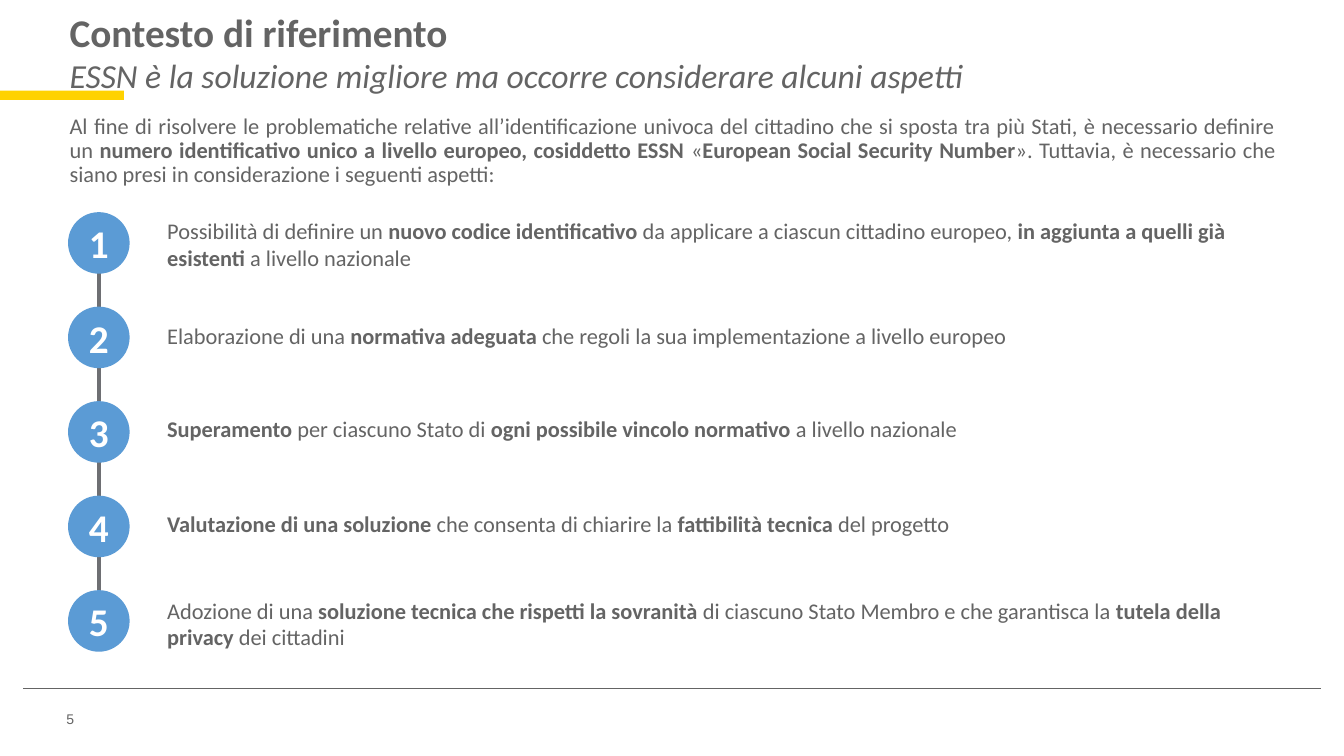
from dataclasses import dataclass

from lxml.etree import SubElement
from pptx import Presentation
from pptx.dml.color import RGBColor
from pptx.enum.shapes import MSO_CONNECTOR, MSO_SHAPE
from pptx.enum.text import MSO_ANCHOR, PP_ALIGN
from pptx.oxml.ns import qn
from pptx.util import Inches, Pt


@dataclass(frozen=True)
class Theme:
    grey: str = "646464"
    rail: str = "6E6F73"
    yellow: str = "FFD200"
    blue: str = "5B9BD5"
    white: str = "FFFFFF"
    font: str = "Calibri"
    footer_font: str = "Arial"
    heading: int = 28
    subtitle: int = 24
    body: int = 16
    footer: int = 10


class SlideBuilder:
    def __init__(self, slide, theme):
        self.shapes = slide.shapes
        self.theme = theme

    def style(self, paragraph, size, color=None, font=None, bold=None, italic=None):
        paragraph.font.size = Pt(size)
        paragraph.font.name = font or self.theme.font
        paragraph.font.color.rgb = RGBColor.from_string(color or self.theme.grey)
        paragraph.font.bold = bold
        paragraph.font.italic = italic

    def frame(self, left, top, width, height, anchor=MSO_ANCHOR.TOP, inset_x=0, inset_y=0):
        box = self.shapes.add_textbox(Inches(left), Inches(top), Inches(width), Inches(height))
        frame = box.text_frame
        frame.word_wrap = True
        frame.vertical_anchor = anchor
        frame.margin_left = frame.margin_right = Inches(inset_x)
        frame.margin_top = frame.margin_bottom = Inches(inset_y)
        return frame

    def rich_text(self, paragraph, marked_text):
        self.style(paragraph, self.theme.body)
        for index, part in enumerate(marked_text.split("**")):
            if part:
                run = paragraph.add_run()
                run.text = part
                run.font.bold = index % 2 == 1

    def line(self, start, end, color, weight):
        connector = self.shapes.add_connector(
            MSO_CONNECTOR.STRAIGHT, *(Inches(value) for value in (*start, *end))
        )
        connector.line.color.rgb = RGBColor.from_string(color)
        connector.line.width = Pt(weight)
        SubElement(connector._element.spPr, qn("a:effectLst"))

    def shape(self, preset, left, top, width, height, color):
        shape = self.shapes.add_shape(
            preset, Inches(left), Inches(top), Inches(width), Inches(height)
        )
        shape.shadow.inherit = False
        shape.fill.solid()
        shape.fill.fore_color.rgb = RGBColor.from_string(color)
        shape.line.fill.background()
        return shape

    def badge(self, number, left, top, size):
        badge = self.shape(MSO_SHAPE.OVAL, left, top, size, size, self.theme.blue)
        badge.line.color.rgb = RGBColor.from_string(self.theme.blue)
        badge.line.width = Pt(2.25)
        frame = badge.text_frame
        frame.margin_left = frame.margin_right = frame.margin_top = frame.margin_bottom = 0
        frame.vertical_anchor = MSO_ANCHOR.MIDDLE
        label = frame.paragraphs[0]
        label.text = str(number)
        label.alignment = PP_ALIGN.CENTER
        self.style(label, self.theme.heading, self.theme.white, bold=True)


INTRO = (
    "Al fine di risolvere le problematiche relative all’identificazione univoca del cittadino "
    "che si sposta tra più Stati, è necessario definire un **numero identificativo unico a "
    "livello europeo, cosiddetto ESSN **«**European Social Security Number**». Tuttavia, è "
    "necessario che siano presi in considerazione i seguenti aspetti:"
)

ASPECTS = [
    (2.11, 0.64, "Possibilità di definire un **nuovo codice identificativo** da applicare a ciascun "
     "cittadino europeo, **in aggiunta a quelli già esistenti **a livello nazionale"),
    (3.15, 0.37, "Elaborazione di una **normativa adeguata **che regoli la sua implementazione "
     "a livello europeo"),
    (4.07, 0.37, "**Superamento **per ciascuno Stato di **ogni possibile vincolo normativo **"
     "a livello nazionale"),
    (5.01, 0.37, "**Valutazione di una soluzione **che consenta di chiarire la "
     "**fattibilità tecnica **del progetto"),
    (5.87, 0.64, "Adozione di una **soluzione tecnica che rispetti la sovranità **di ciascuno Stato "
     "Membro e che garantisca la **tutela della privacy** dei cittadini"),
]

MARGIN, CONTENT_WIDTH = 0.69, 11.96
BADGE_TOP, BADGE_STEP, BADGE_SIZE = 2.12, 0.9375, 0.58


def main():
    deck = Presentation()
    deck.slide_width, deck.slide_height = Inches(13.33), Inches(7.5)
    theme = Theme()
    page = SlideBuilder(deck.slides.add_slide(deck.slide_layouts[6]), theme)

    page_number = page.frame(0.66, 7.01, 1.83, 0.24, MSO_ANCHOR.MIDDLE).paragraphs[0]
    page_number.text = "5"
    page.style(page_number, theme.footer, font=theme.footer_font)
    page.line((0.23, 6.83), (13.1, 6.83), theme.grey, 0.25)
    page.shape(MSO_SHAPE.RECTANGLE, 0, 0.9, 1.23, 0.09, theme.yellow)

    title = page.frame(MARGIN, 0.13, CONTENT_WIDTH, 0.77, MSO_ANCHOR.MIDDLE)
    heading, subtitle = title.paragraphs[0], title.add_paragraph()
    heading.text = "Contesto di riferimento"
    page.style(heading, theme.heading, bold=True)
    subtitle.text = "ESSN è la soluzione migliore ma occorre considerare alcuni aspetti"
    page.style(subtitle, theme.subtitle, italic=True)

    intro = page.frame(MARGIN, 1.09, CONTENT_WIDTH, 0.83, inset_y=0.05).paragraphs[0]
    intro.alignment = PP_ALIGN.JUSTIFY
    intro.line_spacing = 0.9
    page.rich_text(intro, INTRO)

    page.line((0.98, 2.29), (0.98, 6.22), theme.rail, 3)
    for index, (top, height, wording) in enumerate(ASPECTS):
        page.badge(index + 1, MARGIN, BADGE_TOP + index * BADGE_STEP, BADGE_SIZE)
        aspect = page.frame(1.56, top, 11.09, height, inset_x=0.1, inset_y=0.05)
        page.rich_text(aspect.paragraphs[0], wording)

    deck.save("out.pptx")


if __name__ == "__main__":
    main()
